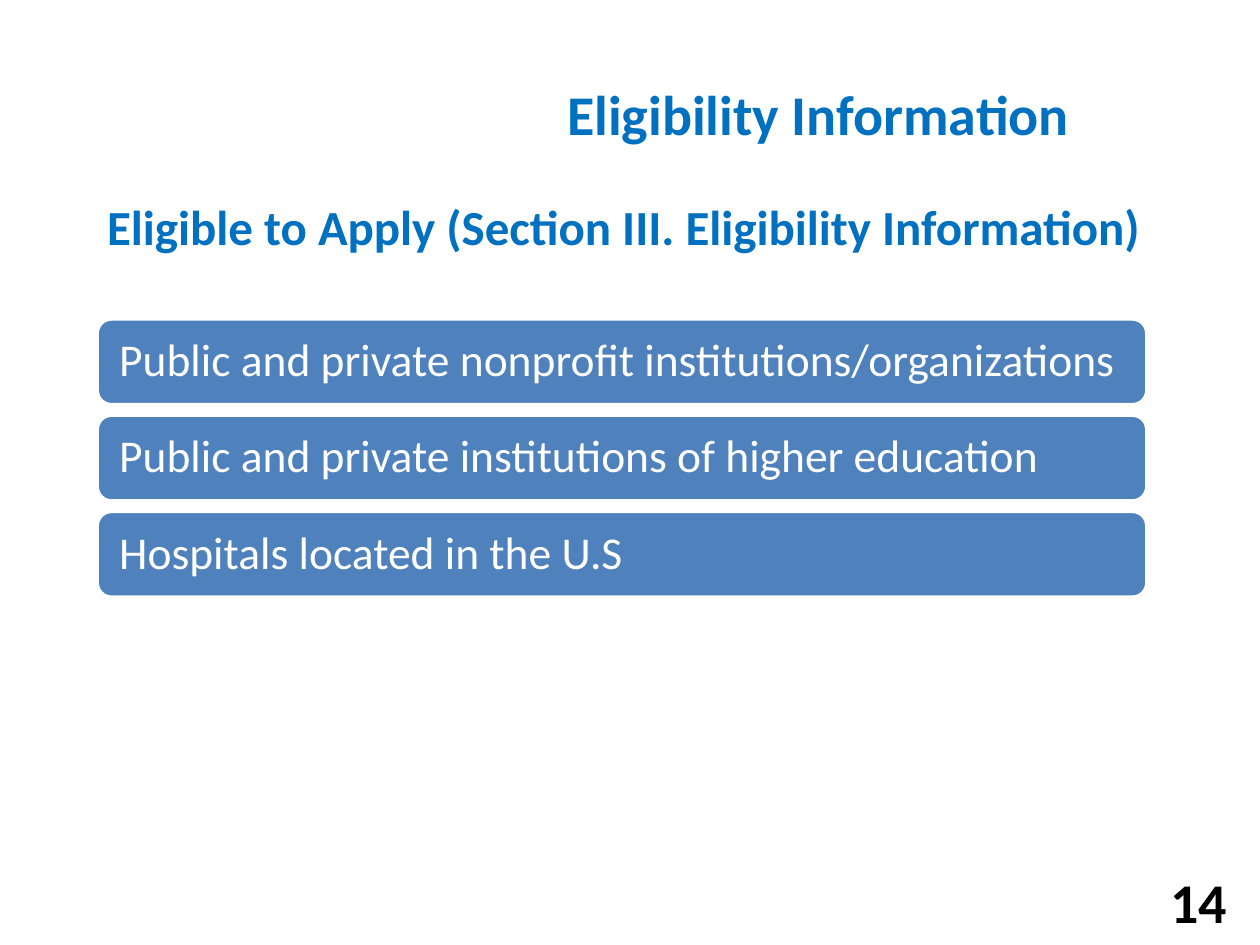
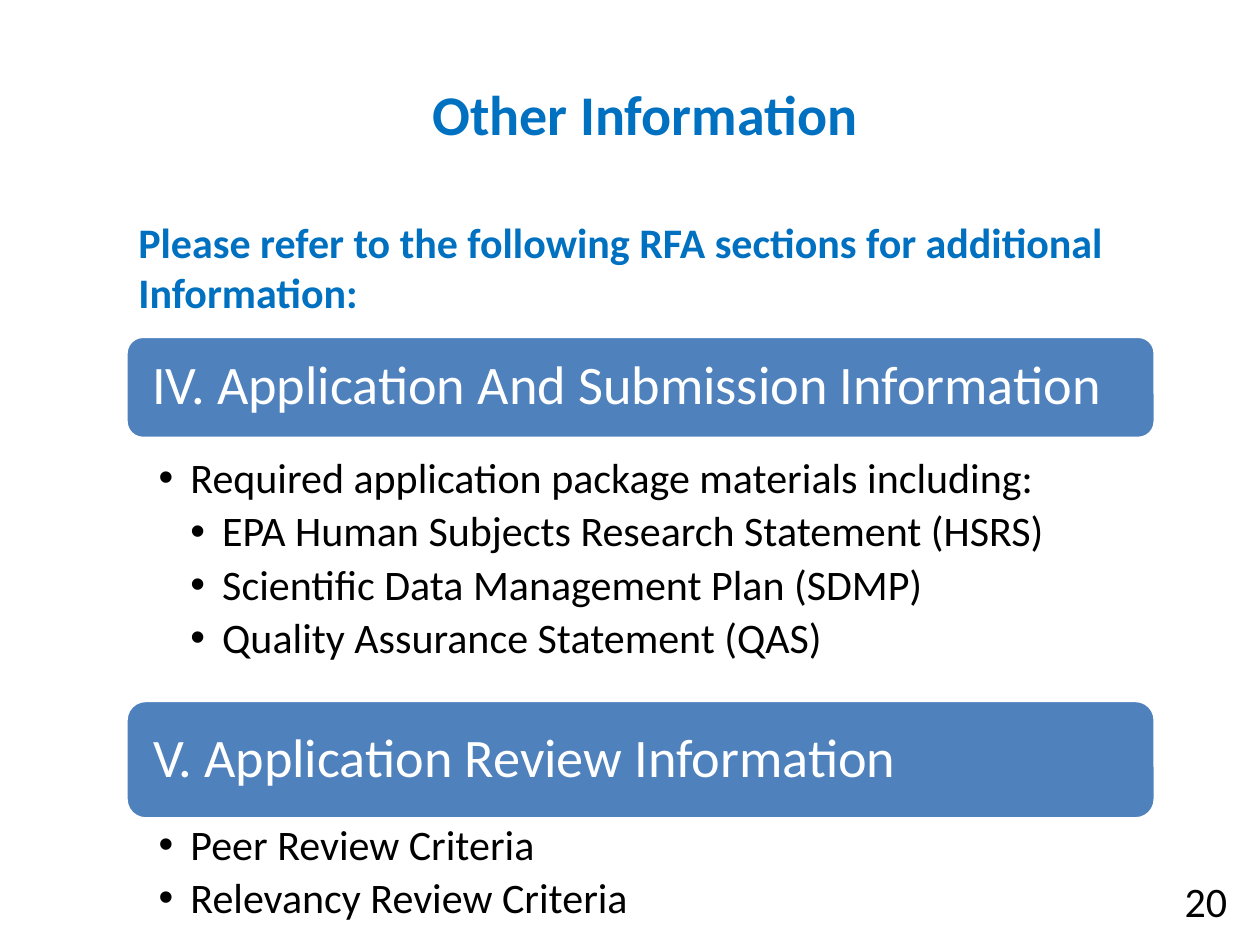
from lxml.etree import SubElement
from pptx import Presentation
from pptx.dml.color import RGBColor
from pptx.enum.shapes import MSO_SHAPE
from pptx.enum.text import MSO_ANCHOR, MSO_AUTO_SIZE, PP_ALIGN
from pptx.oxml.ns import qn
from pptx.util import Cm, Pt

FONT = "Calibri"
HEADING, BAR, WHITE, BLACK = "0070C0", "4F81BD", "FFFFFF", "000000"
TITLE_ONLY, TWO_CONTENT = 5, 3
TITLE_AREA = (8.46, 1.47, 16.08, 1.91)
NUMBER_AREA = (18.21, 17.65, 6.78, 1.02)
BULLET_INDENT = 0.64

ELIGIBILITY = {
    "title": "Eligibility Information",
    "lead": "Eligible to Apply (Section III. Eligibility Information)",
    "applicants": [
        "Public and private nonprofit institutions/organizations",
        "Public and private institutions of higher education",
        "Hospitals located in the U.S",
    ],
    "number": "14",
}
OTHER = {
    "title": "Other Information",
    "lead": "Please refer to the following RFA sections for additional Information:",
    "sections": [
        {
            "heading": "IV. Application And Submission Information",
            "bar": (6.78, 2.06),
            "list": (9.12, 4.62),
            "items": [
                (1, "Required application package materials including:"),
                (2, "EPA Human Subjects Research Statement (HSRS)"),
                (2, "Scientific Data Management Plan (SDMP)"),
                (2, "Quality Assurance Statement (QAS)"),
            ],
        },
        {
            "heading": "V. Application Review Information",
            "bar": (14.12, 2.39),
            "list": (16.51, 2.31),
            "items": [
                (1, "Peer Review Criteria"),
                (1, "Relevancy Review Criteria"),
            ],
        },
    ],
    "number": "20",
}


def color(value):
    return RGBColor.from_string(value)


def place(shape, area):
    shape.left, shape.top, shape.width, shape.height = map(Cm, area)


def style(paragraph, size, tint, bold=False, align=PP_ALIGN.LEFT):
    paragraph.alignment = align
    font = paragraph.font
    font.name, font.size, font.bold = FONT, Pt(size), bold
    font.color.rgb = color(tint)


def write(shape, text, *look, anchor=MSO_ANCHOR.TOP):
    frame = shape.text_frame
    frame.word_wrap = True
    frame.auto_size = MSO_AUTO_SIZE.NONE
    frame.vertical_anchor = anchor
    frame.text = text
    style(frame.paragraphs[0], *look)


def add_text(page, area, text, *look, anchor=MSO_ANCHOR.TOP):
    box = page.shapes.add_textbox(*map(Cm, area))
    write(box, text, *look, anchor=anchor)


def add_page(deck, layout, content, title_align, number_size, number_bold):
    page = deck.slides.add_slide(deck.slide_layouts[layout])
    place(page.shapes.title, TITLE_AREA)
    write(page.shapes.title, content["title"], 32, HEADING, True, title_align)
    add_text(page, NUMBER_AREA, content["number"], number_size, BLACK,
             number_bold, PP_ALIGN.RIGHT, anchor=MSO_ANCHOR.MIDDLE)
    return page


def add_bar(page, area, text, size, inset):
    bar = page.shapes.add_shape(MSO_SHAPE.ROUNDED_RECTANGLE, *map(Cm, area))
    bar.shadow.inherit = False
    bar.fill.solid()
    bar.fill.fore_color.rgb = color(BAR)
    bar.line.color.rgb = color(WHITE)
    bar.line.width = Pt(2)
    write(bar, text, size, WHITE, anchor=MSO_ANCHOR.MIDDLE)
    frame = bar.text_frame
    frame.margin_left = frame.margin_right = Cm(inset)
    frame.paragraphs[0].line_spacing = 0.9


def fill_list(body, area, items):
    place(body, area)
    frame = body.text_frame
    frame.word_wrap = True
    frame.auto_size = MSO_AUTO_SIZE.NONE
    frame.vertical_anchor = MSO_ANCHOR.TOP
    frame.margin_left, frame.margin_right = Cm(0.66), Cm(0.61)
    frame.margin_top = frame.margin_bottom = Cm(0.1)
    frame.text = "\n".join(text for _, text in items)
    for paragraph, (depth, _) in zip(frame.paragraphs, items):
        paragraph.level = depth
        paragraph.line_spacing = 0.9
        paragraph.space_before = Pt(0)
        paragraph.space_after = Pt(4.5)
        properties = paragraph._p.get_or_add_pPr()
        properties.set("marL", str(Cm(BULLET_INDENT * depth)))
        properties.set("indent", str(-Cm(BULLET_INDENT)))
        SubElement(properties, qn("a:buFont")).set("typeface", "Arial")
        SubElement(properties, qn("a:buChar")).set("char", "•")
        style(paragraph, 24, BLACK)


def build_eligibility(deck):
    page = add_page(deck, TITLE_ONLY, ELIGIBILITY, PP_ALIGN.CENTER, 32, True)
    add_text(page, (1.91, 3.84, 22.43, 1.45), ELIGIBILITY["lead"], 28, HEADING, True)
    first_top, pitch = 6.43, 1.94
    for row, applicant in enumerate(ELIGIBILITY["applicants"]):
        add_bar(page, (1.96, first_top + row * pitch, 21.16, 1.73), applicant, 26, 0.36)


def build_other(deck):
    page = add_page(deck, TWO_CONTENT, OTHER, PP_ALIGN.LEFT, 24, False)
    left, width = 2.54, 20.75
    add_text(page, (left, 4.24, width, 2.31), OTHER["lead"], 24, HEADING, True)
    bodies = list(page.placeholders)[1:]
    for section, body in zip(OTHER["sections"], bodies):
        top, height = section["bar"]
        add_bar(page, (left, top, width, height), section["heading"], 31, 0.43)
        top, height = section["list"]
        fill_list(body, (left, top, width, height), section["items"])


def main():
    deck = Presentation()
    deck.slide_width, deck.slide_height = Cm(25.4), Cm(19.05)
    build_eligibility(deck)
    build_other(deck)
    deck.save("out.pptx")


if __name__ == "__main__":
    main()
